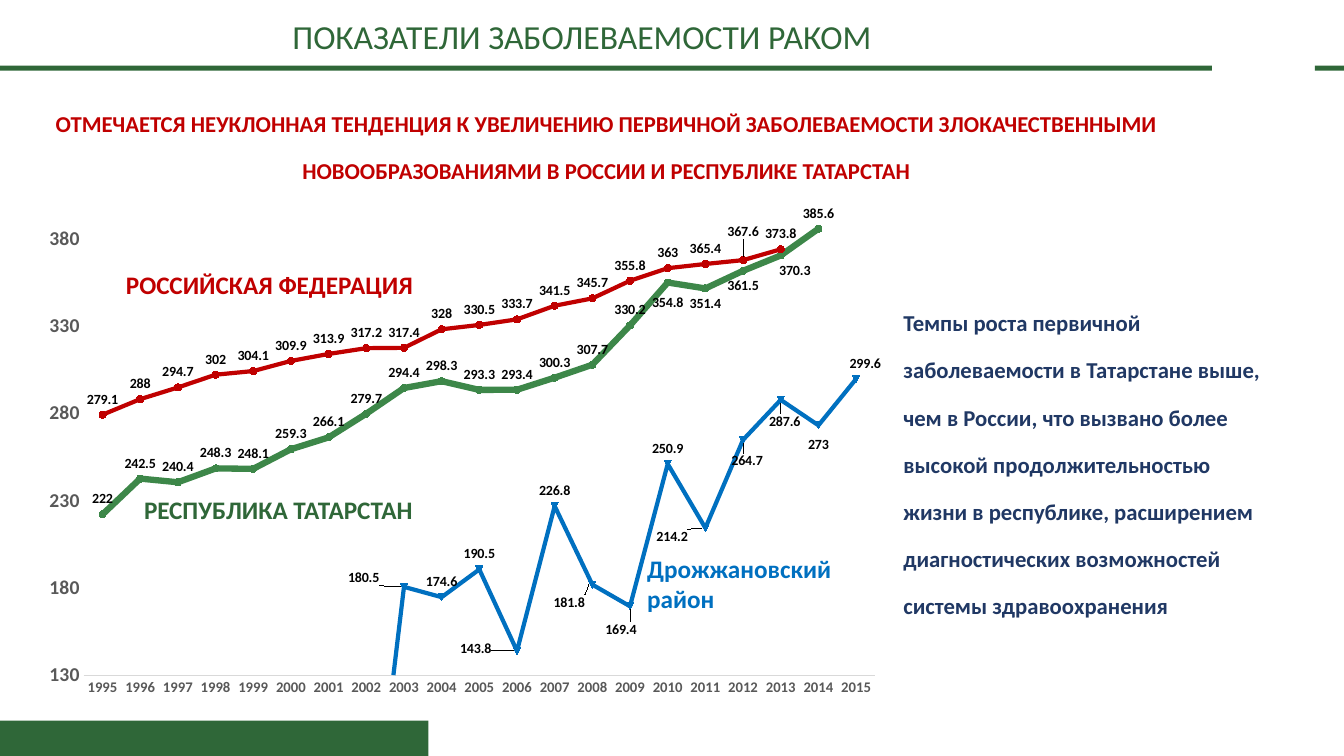
from lxml import etree
from pptx import Presentation
from pptx.chart.data import CategoryChartData
from pptx.dml.color import RGBColor
from pptx.enum.chart import XL_CHART_TYPE as ChartType
from pptx.enum.chart import XL_LABEL_POSITION as LabelPosition
from pptx.enum.chart import XL_MARKER_STYLE as MarkerStyle
from pptx.enum.chart import XL_TICK_MARK as TickMark
from pptx.enum.shapes import MSO_SHAPE as ShapeKind
from pptx.enum.text import MSO_ANCHOR as Anchor
from pptx.enum.text import MSO_AUTO_SIZE as AutoSize
from pptx.enum.text import PP_ALIGN as Align
from pptx.oxml import parse_xml
from pptx.oxml.ns import nsdecls, qn
from pptx.util import Inches, Pt

FONT = "Calibri"
DARK_GREEN = RGBColor(0x2F, 0x67, 0x38)
GREEN = RGBColor(0x3D, 0x87, 0x49)
RED = RGBColor(0xC0, 0x00, 0x00)
BLUE = RGBColor(0x00, 0x70, 0xC0)
NAVY = RGBColor(0x20, 0x38, 0x64)
GREY = RGBColor(0x59, 0x59, 0x59)
LIGHT_GREY = RGBColor(0xD9, 0xD9, 0xD9)
BLACK = RGBColor(0x00, 0x00, 0x00)

CHART_WIDTH, CHART_HEIGHT = 8.43, 5.13
YEARS = range(1995, 2016)
ABOVE, BELOW, LEFT = LabelPosition.ABOVE, LabelPosition.BELOW, LabelPosition.LEFT

TATARSTAN = [222, 242.5, 240.4, 248.3, 248.1, 259.3, 266.1, 279.7, 294.4, 298.3, 293.3,
             293.4, 300.3, 307.7, 330.2, 354.8, 351.4, 361.5, 370.3, 385.6, None]
RUSSIA = [279.1, 288, 294.7, 302, 304.1, 309.9, 313.9, 317.2, 317.4, 328, 330.5,
          333.7, 341.5, 345.7, 355.8, 363, 365.4, 367.6, 373.8, None, None]
DISTRICT = [None] * 7 + [0, 180.5, 174.6, 190.5, 143.8, 226.8, 181.8, 169.4, 250.9,
                         214.2, 264.7, 287.6, 273, 299.6]

# Moved labels: year -> (position, shift right, shift down), shifts in inches
TATARSTAN_LABELS = {2010: (BELOW, 0, 0.05), 2011: (BELOW, 0, 0),
                    2012: (BELOW, 0, 0), 2013: (BELOW, 0.14, 0)}
RUSSIA_LABELS = {2012: (ABOVE, 0, -0.13)}
DISTRICT_LABELS = {2003: (LEFT, -0.17, -0.09), 2006: (LEFT, -0.18, -0.02),
                   2008: (LEFT, 0, 0.18), 2009: (BELOW, -0.09, 0.08),
                   2011: (LEFT, -0.1, 0.09), 2012: (BELOW, 0.04, 0.06),
                   2013: (BELOW, 0.04, 0.06), 2014: (BELOW, 0, 0.04),
                   2015: (ABOVE, 0.09, 0)}

# Name, values, line colour, line width, marker style, marker colour, moved labels
SERIES = [
    ("Республика Татарстан", TATARSTAN, GREEN, 4.5, MarkerStyle.CIRCLE, DARK_GREEN,
     TATARSTAN_LABELS),
    ("Российская Федерация", RUSSIA, RED, 3, MarkerStyle.CIRCLE, RED, RUSSIA_LABELS),
    ("Дрожжановский район", DISTRICT, BLUE, 3, MarkerStyle.AUTOMATIC, BLUE, DISTRICT_LABELS),
]


def set_font(font, size, color, bold=True):
    font.name = FONT
    font.size = Pt(size)
    font.bold = bold
    font.color.rgb = color


def place(shape, left, top, width, height):
    shape.left, shape.top = Inches(left), Inches(top)
    shape.width, shape.height = Inches(width), Inches(height)


def write(shape, lines, size, color, bold=True, align=Align.LEFT, raised=False):
    """Fill a text shape, one paragraph a line; raised text is superscript."""
    frame = shape.text_frame
    frame.word_wrap = True
    frame.auto_size = AutoSize.NONE
    frame.vertical_anchor = Anchor.TOP
    for index, line in enumerate(lines):
        paragraph = frame.add_paragraph() if index else frame.paragraphs[0]
        paragraph.alignment = align
        paragraph.space_before = Pt(0)
        run = paragraph.add_run()
        run.text = line
        set_font(run.font, size, color, bold)
        if raised:
            run._r.get_or_add_rPr().set("baseline", "30000")


def add_text(slide, box, lines, size, color, **style):
    shape = slide.shapes.add_textbox(*map(Inches, box))
    write(shape, lines, size, color, **style)


def add_bar(slide, *box):
    shape = slide.shapes.add_shape(ShapeKind.RECTANGLE, *map(Inches, box))
    shape.shadow.inherit = False
    shape.fill.solid()
    shape.fill.fore_color.rgb = DARK_GREEN
    shape.line.fill.background()


def remove_bullet(paragraph):
    properties = paragraph._p.get_or_add_pPr()
    properties.set("marL", "0")
    properties.set("indent", "0")
    etree.SubElement(properties, qn("a:buNone"))


def manual_layout(**settings):
    items = "".join(f'<c:{name} val="{value}"/>' for name, value in settings.items())
    return parse_xml(f'<c:layout {nsdecls("c")}><c:manualLayout>{items}'
                     '</c:manualLayout></c:layout>')


def move_label(point, position, right, down):
    label = point.data_label
    set_font(label.font, 10, BLACK)
    label.position = position
    if right or down:
        layout = manual_layout(x=round(right / CHART_WIDTH, 4), y=round(down / CHART_HEIGHT, 4))
        label._get_or_add_dLbl().insert(1, layout)


def format_series(series, color, width, marker_style, marker_color, moved_labels):
    series.smooth = False
    series.format.line.color.rgb = color
    series.format.line.width = Pt(width)
    marker = series.marker
    marker.style = marker_style
    marker.size = 5
    marker.format.fill.solid()
    marker.format.fill.fore_color.rgb = marker_color
    marker.format.line.color.rgb = marker_color
    labels = series.data_labels
    labels.show_value = True
    labels.position = ABOVE
    set_font(labels.font, 10, BLACK)
    for year, placement in moved_labels.items():
        move_label(series.points[YEARS.index(year)], *placement)


def format_axes(chart):
    for axis, size in ((chart.category_axis, 10.5), (chart.value_axis, 14)):
        axis.has_major_gridlines = False
        axis.major_tick_mark = axis.minor_tick_mark = TickMark.NONE
        set_font(axis.tick_labels.font, size, GREY)
    chart.category_axis.format.line.color.rgb = LIGHT_GREY
    chart.category_axis.format.line.width = Pt(0.75)
    values = chart.value_axis
    values.minimum_scale, values.maximum_scale, values.major_unit = 130, 400, 50
    values.format.line.fill.background()


def add_incidence_chart(slide):
    data = CategoryChartData()
    data.categories = [str(year) for year in YEARS]
    for name, values, *_ in SERIES:
        data.add_series(name, values)
    chart = slide.shapes.add_chart(ChartType.LINE_MARKERS, Inches(0.35), Inches(1.82),
                                   Inches(CHART_WIDTH), Inches(CHART_HEIGHT), data).chart
    set_font(chart.font, 10, BLACK, bold=False)
    chart.has_legend = False
    chart.has_title = False
    plot = chart.plots[0]
    plot.vary_by_categories = False
    for series, (_, _, *style) in zip(plot.series, SERIES):
        format_series(series, *style)
    format_axes(chart)
    plot_area = chart._chartSpace.chart.plotArea
    for layout in plot_area.findall(qn("c:layout")):
        plot_area.remove(layout)
    plot_area.insert(0, manual_layout(layoutTarget="inner", xMode="edge", yMode="edge",
                                      x=0.057, y=0.039, w=0.931, h=0.912))


def main():
    presentation = Presentation()
    presentation.slide_width, presentation.slide_height = Inches(13.33), Inches(7.5)
    slide = presentation.slides.add_slide(presentation.slide_layouts[1])
    title, conclusion = slide.placeholders

    add_bar(slide, 0, 0.65, 12.02, 0.05)
    add_bar(slide, 13.04, 0.65, 0.29, 0.05)
    add_bar(slide, 0, 7.15, 4.25, 0.35)

    place(title, 2.8, 0.11, 7.13, 0.5)
    write(title, ["ПОКАЗАТЕЛИ ЗАБОЛЕВАЕМОСТИ РАКОМ"], 24, DARK_GREEN, bold=False)
    add_text(slide, (0.22, 0.99, 11.58, 1.04),
             ["ОТМЕЧАЕТСЯ НЕУКЛОННАЯ ТЕНДЕНЦИЯ К УВЕЛИЧЕНИЮ ПЕРВИЧНОЙ ЗАБОЛЕВАЕМОСТИ "
              "ЗЛОКАЧЕСТВЕННЫМИ НОВООБРАЗОВАНИЯМИ В РОССИИ И РЕСПУБЛИКЕ ТАТАРСТАН"],
             28, RED, align=Align.CENTER, raised=True)
    place(conclusion, 8.86, 2.97, 3.85, 3.56)
    write(conclusion,
          ["Темпы роста первичной заболеваемости в Татарстане выше, чем в России, что вызвано "
           "более высокой продолжительностью жизни в республике, расширением "
           "диагностических возможностей системы здравоохранения"],
          28, NAVY, raised=True)
    remove_bullet(conclusion.text_frame.paragraphs[0])

    add_incidence_chart(slide)
    add_text(slide, (1.33, 4.86, 3.31, 0.4), ["РЕСПУБЛИКА ТАТАРСТАН"], 18, DARK_GREEN)
    add_text(slide, (1.15, 2.62, 3.31, 0.4), ["РОССИЙСКАЯ ФЕДЕРАЦИЯ"], 18, RED)
    add_text(slide, (6.32, 5.44, 3.31, 0.71), ["Дрожжановский", "район"], 18, BLUE)
    presentation.save("out.pptx")


if __name__ == "__main__":
    main()
